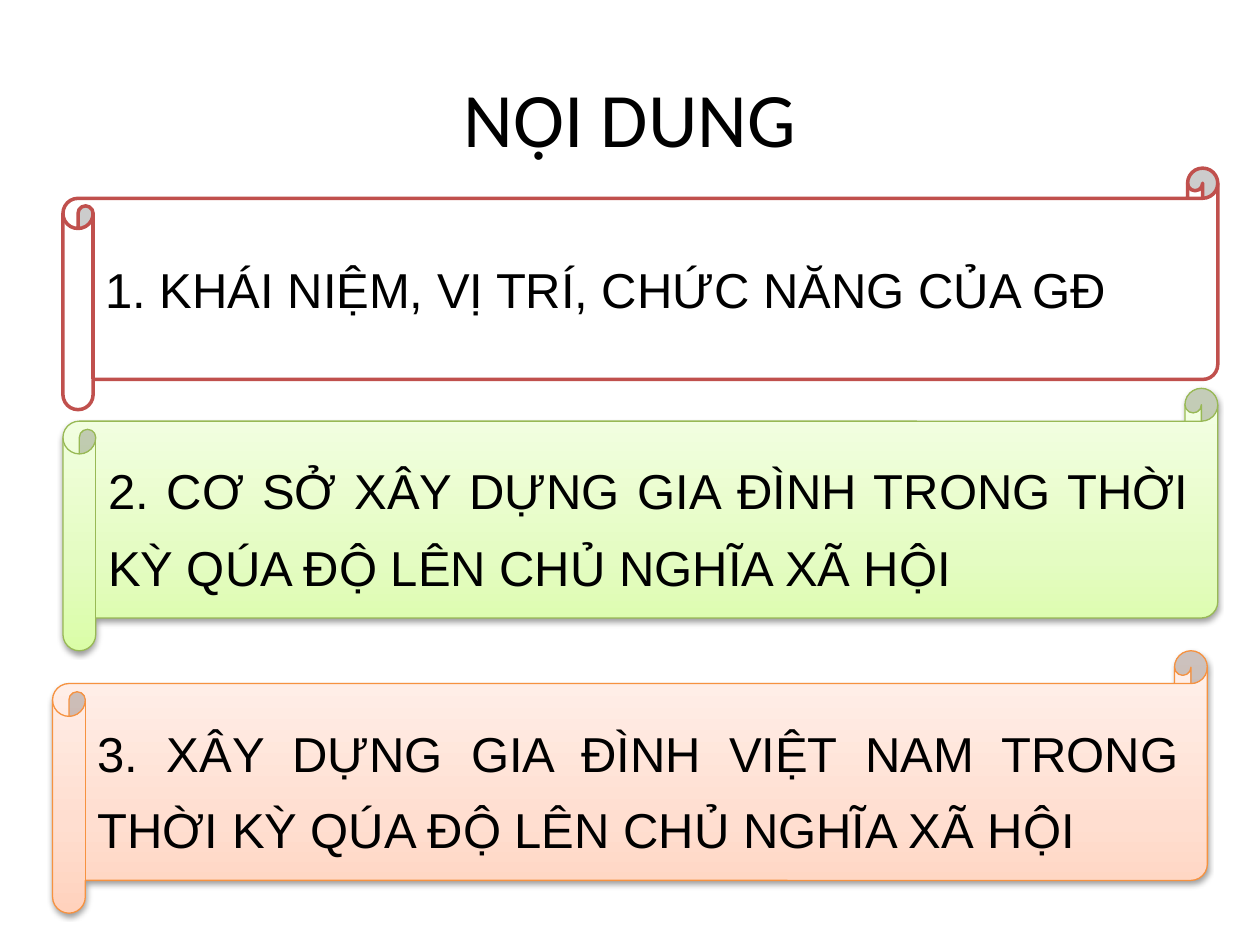
from dataclasses import dataclass
from typing import Optional

from lxml import etree
from pptx import Presentation
from pptx import util as u
from pptx.dml.color import RGBColor
from pptx.enum import shapes, text
from pptx.oxml import ns

BLACK = RGBColor(0x00, 0x00, 0x00)
WHITE = RGBColor(0xFF, 0xFF, 0xFF)
RED = RGBColor(0xC0, 0x50, 0x4D)
GREEN = RGBColor(0x98, 0xB9, 0x55)
ORANGE = RGBColor(0xF6, 0x92, 0x40)
GREEN_SHADES = (
    RGBColor(0xDA, 0xFD, 0xA7),
    RGBColor(0xE4, 0xFC, 0xC2),
    RGBColor(0xF5, 0xFF, 0xE7),
)
ORANGE_SHADES = (
    RGBColor(0xFF, 0xD2, 0xBD),
    RGBColor(0xFF, 0xDE, 0xD0),
    RGBColor(0xFF, 0xF2, 0xED),
)
STOP_POSITIONS = (0, 35, 100)
SCROLL_WIDTH = 23.28


@dataclass(frozen=True)
class Scroll:
    wording: str
    left: float
    top: float
    height: float
    outline: RGBColor
    outline_width: float
    shades: Optional[tuple[RGBColor, ...]] = None
    line_spacing: Optional[float] = None


SCROLLS = (
    Scroll("1. KHÁI NIỆM, VỊ TRÍ, CHỨC NĂNG CỦA GĐ",
           1.27, 3.39, 4.87, RED, 2),
    Scroll("2. CƠ SỞ XÂY DỰNG GIA ĐÌNH TRONG THỜI KỲ QÚA ĐỘ LÊN CHỦ NGHĨA XÃ HỘI",
           1.27, 7.83, 5.29, GREEN, 0.75, GREEN_SHADES, 1.3),
    Scroll("3. XÂY DỰNG GIA ĐÌNH VIỆT NAM TRONG THỜI KỲ QÚA ĐỘ LÊN CHỦ NGHĨA XÃ HỘI",
           1.06, 13.12, 5.29, ORANGE, 0.75, ORANGE_SHADES, 1.3),
)


def add_color(parent, color: RGBColor):
    return etree.SubElement(parent, ns.qn("a:srgbClr"), val=str(color))


def fill_gradient(shape, shades: tuple[RGBColor, ...]) -> None:
    shape.fill.gradient()
    shape.fill.gradient_angle = 90
    stops = shape._element.spPr.find(".//" + ns.qn("a:gsLst"))
    for stop in list(stops):
        stops.remove(stop)
    for position, shade in zip(STOP_POSITIONS, shades):
        stop = etree.SubElement(stops, ns.qn("a:gs"), pos=str(position * 1000))
        add_color(stop, shade)


def add_shadow(shape) -> None:
    effects = shape._element.spPr.find(ns.qn("a:effectLst"))
    shadow = etree.SubElement(
        effects, ns.qn("a:outerShdw"), blurRad=str(u.Pt(3.1)),
        dist=str(u.Pt(1.6)), dir="5400000", rotWithShape="0")
    etree.SubElement(add_color(shadow, BLACK), ns.qn("a:alpha"), val="38000")


def write(para, wording: str, font: str, size: float) -> None:
    span = para.add_run()
    span.text = wording
    span.font.name = font
    span.font.size = u.Pt(size)
    span.font.color.rgb = BLACK


def draw_scroll(page, scroll: Scroll) -> None:
    box = page.shapes.add_shape(
        shapes.MSO_SHAPE.HORIZONTAL_SCROLL, u.Cm(scroll.left), u.Cm(scroll.top),
        u.Cm(SCROLL_WIDTH), u.Cm(scroll.height))
    box.shadow.inherit = False
    box.line.color.rgb = scroll.outline
    box.line.width = u.Pt(scroll.outline_width)
    if scroll.shades:
        fill_gradient(box, scroll.shades)
        add_shadow(box)
    else:
        box.fill.solid()
        box.fill.fore_color.rgb = WHITE
    box.text_frame.word_wrap = True
    box.text_frame.vertical_anchor = text.MSO_ANCHOR.MIDDLE
    para = box.text_frame.paragraphs[0]
    para.alignment = text.PP_ALIGN.JUSTIFY
    para.line_spacing = scroll.line_spacing
    write(para, scroll.wording, "Arial", 28)


def draw_title(page, wording: str) -> None:
    title = page.shapes.title
    title.left, title.top = u.Cm(1.27), u.Cm(0.76)
    title.width, title.height = u.Cm(22.86), u.Cm(3.18)
    title.text_frame.vertical_anchor = text.MSO_ANCHOR.MIDDLE
    para = title.text_frame.paragraphs[0]
    para.alignment = text.PP_ALIGN.CENTER
    write(para, wording, "Calibri", 44)


def main() -> None:
    deck = Presentation()
    deck.slide_width, deck.slide_height = u.Cm(25.4), u.Cm(19.05)
    page = deck.slides.add_slide(deck.slide_layouts.get_by_name("Title Only"))
    draw_title(page, "NỘI DUNG")
    for scroll in SCROLLS:
        draw_scroll(page, scroll)
    deck.save("out.pptx")


if __name__ == "__main__":
    main()
